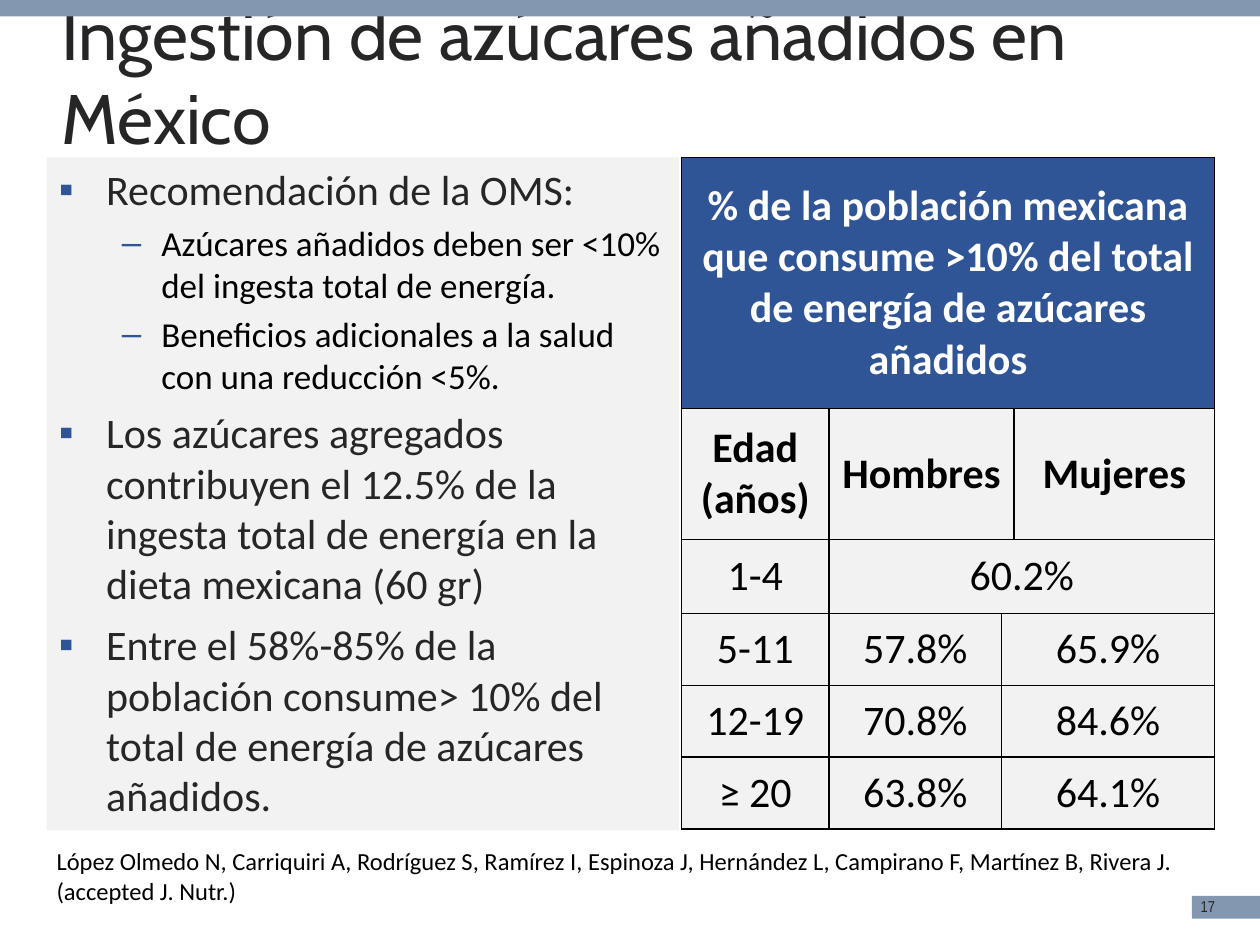
import dataclasses

import pptx
import pptx.dml.color
import pptx.enum.shapes
import pptx.enum.text
import pptx.oxml
import pptx.oxml.ns
import pptx.util

Pt = pptx.util.Pt
RGB = pptx.dml.color.RGBColor.from_string
ALIGN = pptx.enum.text.PP_ALIGN
ANCHOR = pptx.enum.text.MSO_ANCHOR
RECT = pptx.enum.shapes.MSO_SHAPE.RECTANGLE


@dataclasses.dataclass(frozen=True)
class Theme:
    """Colours, fonts and type sizes of the slide."""
    band: str = "8497B0"
    blue: str = "2F5597"
    pale: str = "F2F2F2"
    dark: str = "262626"
    black: str = "000000"
    white: str = "FFFFFF"
    head: str = "Cabin"
    text: str = "Calibri"
    thin: str = "Arial Narrow"
    title: int = 40
    main: int = 24
    sub: int = 20
    note: int = 14
    page: int = 9


THEME = Theme()

POINTS = [
    (0, "Recomendación de la OMS:"),
    (1, "Azúcares añadidos deben ser <10% del ingesta total de energía."),
    (1, "Beneficios adicionales a la salud con una reducción <5%."),
    (0, "Los azúcares agregados contribuyen el 12.5% de la ingesta total "
        "de energía en la dieta mexicana (60 gr)"),
    (0, "Entre el 58%-85% de la población consume> 10% del total de "
        "energía de azúcares añadidos."),
]

COLS = [84.2, 98.6, 7.2, 114.5]
ROWS = [143.3, 74.9, 42.5, 41, 41, 41]
CELLS = [
    [(0, 4, "% de la población mexicana que consume >10% del total de "
            "energía de azúcares añadidos")],
    [(0, 1, "Edad (años)"), (1, 2, "Hombres"), (3, 1, "Mujeres")],
    [(0, 1, "1-4"), (1, 3, "60.2%")],
    [(0, 1, "5-11"), (1, 1, "57.8%"), (2, 2, "65.9%")],
    [(0, 1, "12-19"), (1, 1, "70.8%"), (2, 2, "84.6%")],
    [(0, 1, "≥ 20"), (1, 1, "63.8%"), (2, 2, "64.1%")],
]
CITE = ("López Olmedo N, Carriquiri A, Rodríguez S, Ramírez I, Espinoza J, "
        "Hernández L, Campirano F, Martínez B, Rivera J. (accepted J. Nutr.)")


def style(para, face, size, tint, bold=False, align=ALIGN.LEFT):
    """Set the font and alignment of one paragraph."""
    para.alignment = align
    font = para.font
    font.name, font.size, font.bold = face, Pt(size), bold
    font.color.rgb = RGB(tint)


def add_rect(slide, box, tint):
    """Add a plain filled rectangle."""
    shape = slide.shapes.add_shape(RECT, *map(Pt, box))
    shape.shadow.inherit = False
    shape.fill.solid()
    shape.fill.fore_color.rgb = RGB(tint)
    shape.line.fill.background()
    return shape


def add_text(slide, box, text, face, size, tint, wrap=True):
    """Add a text box with one paragraph."""
    frame = slide.shapes.add_textbox(*map(Pt, box)).text_frame
    frame.word_wrap = wrap
    frame.text = text
    style(frame.paragraphs[0], face, size, tint)


def add_bullet(para, mark, left, hang, tint):
    """Give a paragraph a coloured bullet and a hanging indent."""
    props = para._p.get_or_add_pPr()
    props.set("marL", str(Pt(left)))
    props.set("indent", str(-Pt(hang)))
    space = pptx.oxml.ns.nsdecls("a")
    for xml in (f'<a:buClr {space}><a:srgbClr val="{tint}"/></a:buClr>',
                f'<a:buFont {space} typeface="Arial"/>',
                f'<a:buChar {space} char="{mark}"/>'):
        props.append(pptx.oxml.parse_xml(xml))


def add_edges(cell, tint):
    """Draw one-point lines on all sides of a cell."""
    props = cell._tc.get_or_add_tcPr()
    space = pptx.oxml.ns.nsdecls("a")
    for side in "LRTB":
        props.append(pptx.oxml.parse_xml(
            f'<a:ln{side} {space} w="{Pt(1)}"><a:solidFill>'
            f'<a:srgbClr val="{tint}"/></a:solidFill></a:ln{side}>'))


def add_frame(slide, box):
    """Add the top band and the page number tab within the page box."""
    left, top, width, height = box
    for depth in (10.8, 3.6):
        add_rect(slide, (left, top - 1.4, width, depth), THEME.band)
    add_rect(slide, (left + width - 38.9, top + height - 28.1, 38.9, 13),
             THEME.band)
    add_text(slide, (left + width - 41, top + height - 31, 28, 18), "17",
             THEME.thin, THEME.page, THEME.dark, wrap=False)


def add_title(slide, box):
    """Place and format the title placeholder."""
    title = slide.shapes.title
    title.left, title.top, title.width, title.height = map(Pt, box)
    frame = title.text_frame
    frame.text = "Ingestión de azúcares añadidos en México"
    frame.word_wrap = True
    frame.auto_size = pptx.enum.text.MSO_AUTO_SIZE.NONE
    frame.vertical_anchor = ANCHOR.MIDDLE
    style(frame.paragraphs[0], THEME.head, THEME.title, THEME.dark)


def add_points(slide, box):
    """Add the grey panel with its two levels of bullets."""
    frame = add_rect(slide, box, THEME.pale).text_frame
    frame.word_wrap = True
    frame.vertical_anchor = ANCHOR.TOP
    kinds = [("▪", 27, 27, 6, THEME.main, THEME.dark),
             ("–", 58.5, 22.5, 4, THEME.sub, THEME.black)]
    for row, (level, text) in enumerate(POINTS):
        para = frame.add_paragraph() if row else frame.paragraphs[0]
        mark, left, hang, gap, size, tint = kinds[level]
        para.text = text
        para.space_before = Pt(gap)
        add_bullet(para, mark, left, hang, THEME.blue)
        style(para, THEME.text, size, tint)


def add_grid(slide, box):
    """Add the table of intake by age and sex."""
    table = slide.shapes.add_table(
        len(ROWS), len(COLS), *map(Pt, box)).table
    for col, width in zip(table.columns, COLS):
        col.width = Pt(width)
    for row, height in zip(table.rows, ROWS):
        row.height = Pt(height)
    for cell in table.iter_cells():
        add_edges(cell, THEME.black)
    for row, items in enumerate(CELLS):
        fill, tint = ((THEME.pale, THEME.black) if row
                      else (THEME.blue, THEME.white))
        for col, span, text in items:
            cell = table.cell(row, col)
            if span > 1:
                cell.merge(table.cell(row, col + span - 1))
            cell.fill.solid()
            cell.fill.fore_color.rgb = RGB(fill)
            cell.margin_left = cell.margin_right = Pt(5)
            cell.margin_top = cell.margin_bottom = Pt(3)
            cell.vertical_anchor = ANCHOR.MIDDLE
            cell.text = text
            style(cell.text_frame.paragraphs[0], THEME.text, THEME.main,
                  tint, row < 2, ALIGN.CENTER)


def main():
    """Build the slide and save it."""
    deck = pptx.Presentation()
    deck.slide_width, deck.slide_height = Pt(720), Pt(540)
    slide = deck.slides.add_slide(deck.slide_layouts[5])
    add_frame(slide, (0, 0, 720, 540))
    add_title(slide, (28, 15, 672.5, 55.5))
    add_points(slide, (26.6, 90, 361.4, 384.5))
    add_grid(slide, (389.5, 90, sum(COLS), sum(ROWS)))
    add_text(slide, (25.2, 480.2, 658.8, 41), CITE,
             THEME.text, THEME.note, THEME.black)
    deck.save("out.pptx")


if __name__ == "__main__":
    main()
